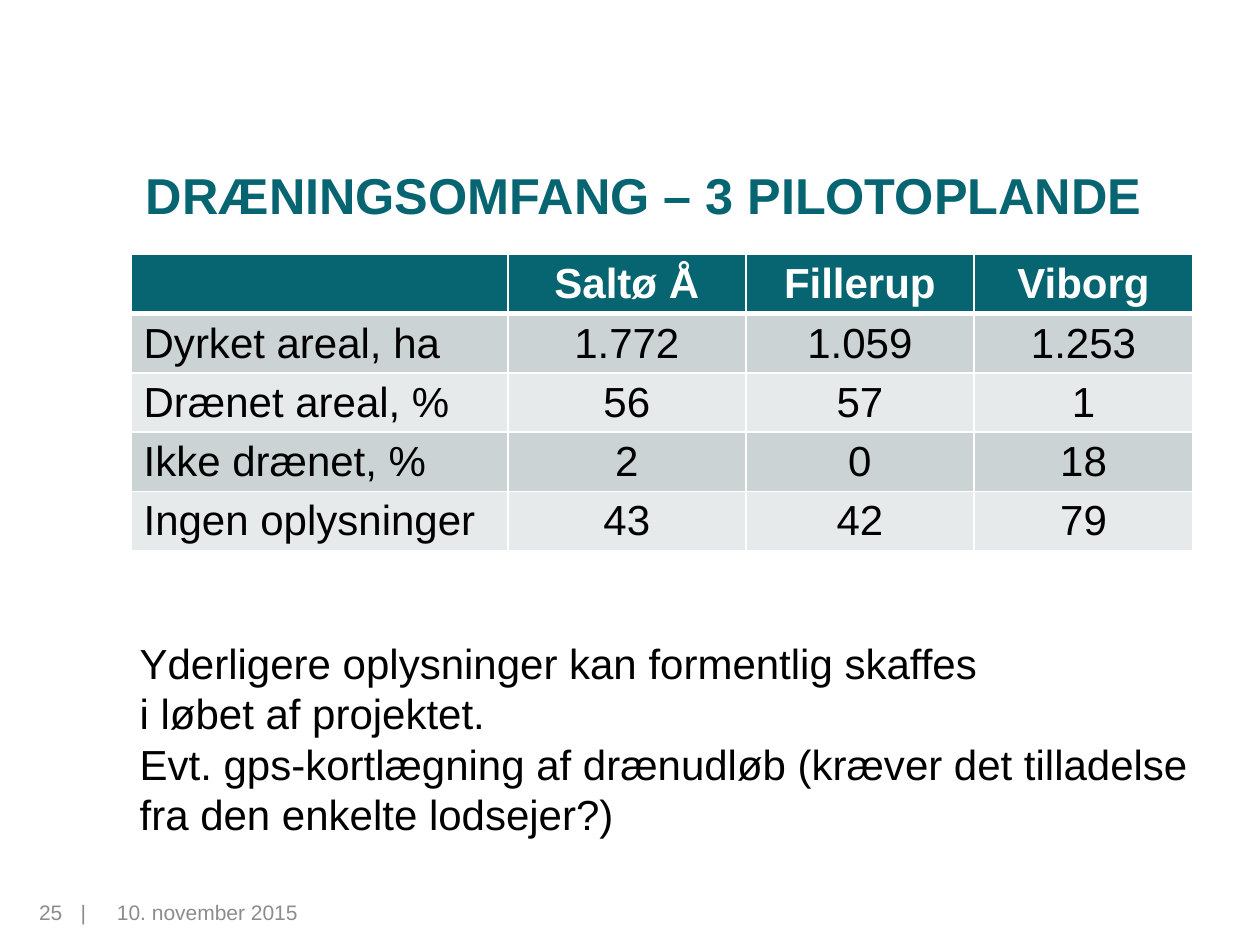
from lxml import etree
from pptx import Presentation
from pptx.dml.color import RGBColor
from pptx.enum.text import MSO_ANCHOR, PP_ALIGN
from pptx.oxml.ns import qn
from pptx.util import Inches, Pt

LEFT, CENTER = PP_ALIGN.LEFT, PP_ALIGN.CENTER
TOP, MIDDLE = MSO_ANCHOR.TOP, MSO_ANCHOR.MIDDLE
FONT = "Arial"
COLORS = {
    "teal": "076471",
    "white": "FFFFFF",
    "black": "000000",
    "gray": "8C8C8C",
    "dark_band": "CCD3D5",
    "light_band": "E7EAEB",
}
COLUMN_WIDTHS = [2.99, 1.89, 1.81, 1.74]
ROW_HEIGHT = 0.41
ROWS = [
    ["", "Saltø Å", "Fillerup", "Viborg"],
    ["Dyrket areal, ha", "1.772", "1.059", "1.253"],
    ["Drænet areal, %", "56", "57", "1"],
    ["Ikke drænet, %", "2", "0", "18"],
    ["Ingen oplysninger", "43", "42", "79"],
]


def write_text(text_frame, lines, size=24, color="black", bold=False, align=LEFT):
    """Write one paragraph per item; a vertical tab is a line break."""
    for index, line in enumerate(lines):
        paragraph = text_frame.paragraphs[0] if index == 0 else text_frame.add_paragraph()
        paragraph.text = line
        paragraph.alignment = align
        for run in paragraph.runs:
            run.font.name = FONT
            run.font.size = Pt(size)
            run.font.bold = bold
            run.font.color.rgb = RGBColor.from_string(COLORS[color])


def add_text(slide, box, lines, anchor=TOP, wrap=True, **text_format):
    shape = slide.shapes.add_textbox(*map(Inches, box))
    text_frame = shape.text_frame
    text_frame.word_wrap = wrap
    text_frame.vertical_anchor = anchor
    write_text(text_frame, lines, **text_format)
    return shape


def set_borders(cell, top, bottom):
    """Draw white cell borders, with top and bottom widths in points."""
    properties = cell._tc.get_or_add_tcPr()
    for side, width in (("L", 1), ("R", 1), ("T", top), ("B", bottom)):
        line = etree.SubElement(properties, qn(f"a:ln{side}"), w=str(Pt(width)))
        fill = etree.SubElement(line, qn("a:solidFill"))
        etree.SubElement(fill, qn("a:srgbClr"), val=COLORS["white"])


def add_drainage_table(slide, left, top):
    height = ROW_HEIGHT * len(ROWS)
    box = (left, top, sum(COLUMN_WIDTHS), height)
    table = slide.shapes.add_table(len(ROWS), len(COLUMN_WIDTHS), *map(Inches, box)).table
    for column, width in zip(table.columns, COLUMN_WIDTHS):
        column.width = Inches(width)
    for row_index, values in enumerate(ROWS):
        header = row_index == 0
        band = "teal" if header else "dark_band" if row_index % 2 else "light_band"
        table.rows[row_index].height = Inches(ROW_HEIGHT)
        for column_index, value in enumerate(values):
            cell = table.cell(row_index, column_index)
            cell.margin_bottom = Inches(0.02)
            set_borders(cell, top=3 if row_index == 1 else 1, bottom=3 if header else 1)
            cell.fill.solid()
            cell.fill.fore_color.rgb = RGBColor.from_string(COLORS[band])
            write_text(
                cell.text_frame,
                [value],
                color="white" if header else "black",
                bold=header,
                align=CENTER if column_index else LEFT,
            )


def add_footer(slide, top, height):
    number = add_text(slide, (0, top, 0.78, height), ["25\t|"], size=12, color="gray")
    number.text_frame.margin_left = Inches(0.31)
    number.text_frame.margin_right = 0
    properties = number.text_frame.paragraphs[0]._p.get_or_add_pPr()
    tabs = etree.SubElement(properties, qn("a:tabLst"))
    etree.SubElement(tabs, qn("a:tab"), pos=str(Inches(0.33)), algn="l")
    add_text(slide, (0.83, top, 2.33, height), ["10. november 2015"], size=12, color="gray")


def main():
    presentation = Presentation()
    presentation.slide_width = Inches(10)
    presentation.slide_height = Inches(7.5)
    slide = presentation.slides.add_slide(presentation.slide_layouts[6])
    add_text(
        slide,
        (1.06, 1.07, 8.44, 0.94),
        ["DRÆNINGSOMFANG – 3 PILOTOPLANDE"],
        anchor=MIDDLE,
        size=28.8,
        color="teal",
        bold=True,
    )
    add_drainage_table(slide, 1.04, 2.02)
    add_text(
        slide,
        (1.01, 5.01, 8.61, 1.72),
        [
            "Yderligere oplysninger kan formentlig skaffes\vi løbet af projektet.",
            "Evt. gps-kortlægning af drænudløb (kræver det tilladelse",
            "fra den enkelte lodsejer?)",
        ],
        wrap=False,
    )
    add_footer(slide, 7.09, 0.4)
    presentation.save("out.pptx")


if __name__ == "__main__":
    main()
